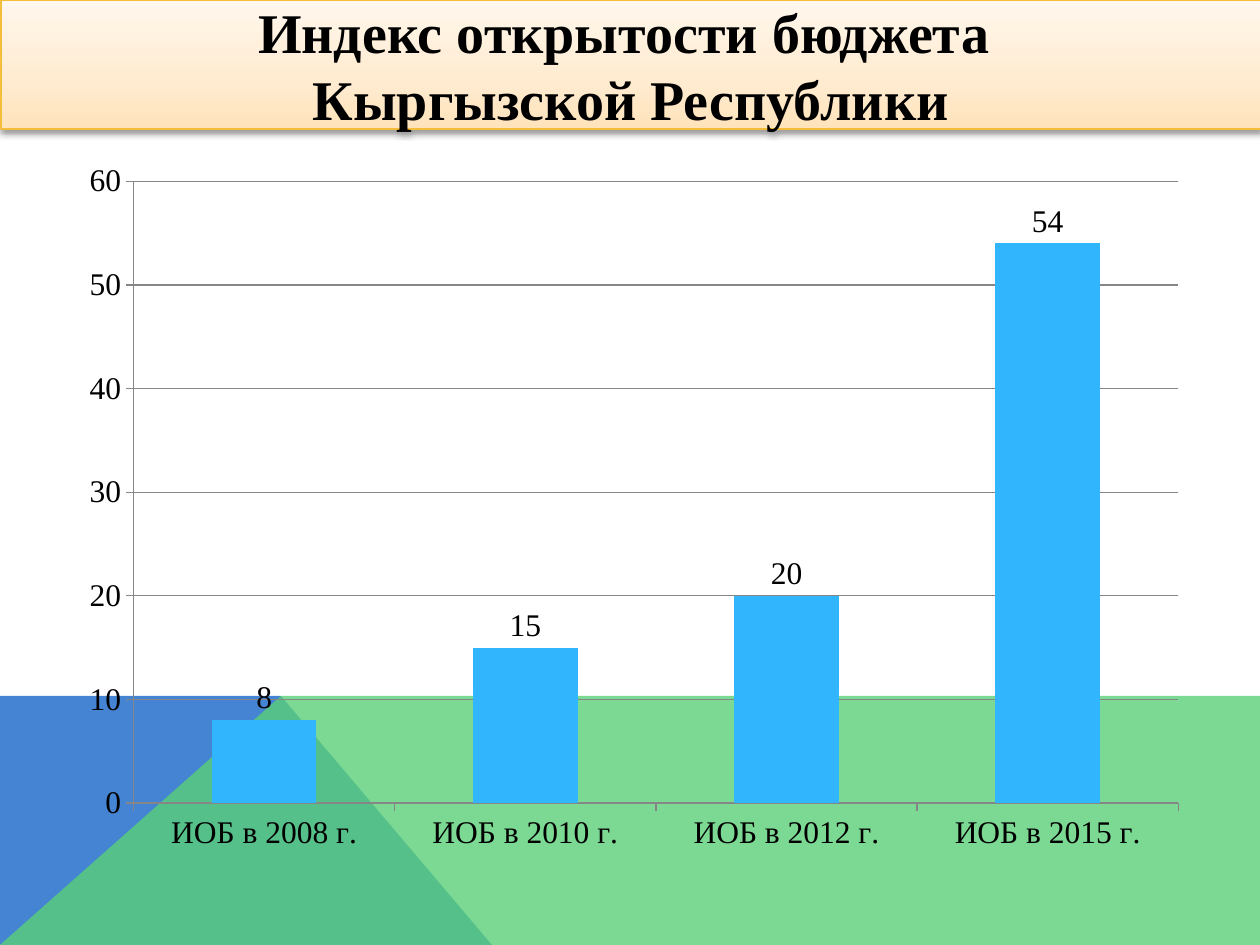
from lxml.etree import SubElement
from pptx import Presentation
from pptx.chart.data import CategoryChartData
from pptx.dml.color import RGBColor
from pptx.enum.chart import XL_CHART_TYPE, XL_LABEL_POSITION, XL_TICK_MARK
from pptx.enum.shapes import MSO_SHAPE
from pptx.enum.text import MSO_ANCHOR, PP_ALIGN
from pptx.oxml.ns import qn
from pptx.util import Pt

PX = 914400 / 126
FONT = "Times New Roman"
BLACK = RGBColor(0x00, 0x00, 0x00)
BLUE = RGBColor(0x45, 0x84, 0xD3)
GREEN = RGBColor(0x5B, 0xD0, 0x78)
SKY = RGBColor(0x31, 0xB6, 0xFD)
GREY = RGBColor(0x86, 0x86, 0x86)
GOLD = RGBColor(0xF4, 0xBE, 0x3A)
CREAM = [(0, RGBColor(0xFF, 0xE3, 0xBB)),
         (35, RGBColor(0xFF, 0xEB, 0xCF)),
         (100, RGBColor(0xFF, 0xF7, 0xED))]
DATA = {"ИОБ в 2008 г.": 8, "ИОБ в 2010 г.": 15,
        "ИОБ в 2012 г.": 20, "ИОБ в 2015 г.": 54}


def px(*nums):
    """Turn pixel lengths into EMU."""
    return [round(num * PX) for num in nums]


def add_node(base, tag, **attrs):
    """Append a DrawingML child with the given attributes."""
    return SubElement(base, qn(f"a:{tag}"), {key: str(val) for key, val in attrs.items()})


def add_tint(base, color, alpha=None):
    """Append a colour node with optional opacity in percent."""
    node = add_node(base, "srgbClr", val=color)
    if alpha is not None:
        add_node(node, "alpha", val=alpha * 1000)


def set_font(font, size, color=BLACK, bold=False):
    """Format a font."""
    font.name, font.size, font.bold = FONT, Pt(size), bold
    font.color.rgb = color


def add_text(shape, text, size, align=PP_ALIGN.CENTER, **style):
    """Write one paragraph into a shape."""
    frame = shape.text_frame
    frame.word_wrap = True
    frame.vertical_anchor = MSO_ANCHOR.MIDDLE
    para = frame.paragraphs[0]
    para.text, para.alignment = text, align
    for run in para.runs:
        set_font(run.font, size, **style)


def add_poly(slide, points, color, alpha=100):
    """Draw a filled outline."""
    form = slide.shapes.build_freeform(*points[0], scale=PX)
    form.add_line_segments(points[1:], close=True)
    shape = form.convert_to_shape()
    shape.shadow.inherit = False
    shape.line.fill.background()
    shape.fill.solid()
    shape.fill.fore_color.rgb = color
    if alpha < 100:
        tint = shape.fill._xPr.find(".//" + qn("a:srgbClr"))
        add_node(tint, "alpha", val=alpha * 1000)


def add_banner(slide, text):
    """Draw the title band with its gradient and shadow."""
    shape = slide.shapes.add_shape(MSO_SHAPE.RECTANGLE, *px(1, 0, 1260, 129))
    shape.line.color.rgb = GOLD
    shape.line.width = Pt(0.75)
    shape.fill.gradient()
    shape.fill.gradient_angle = 90
    props = shape._element.spPr
    stops = props.find(".//" + qn("a:gsLst"))
    for old in list(stops):
        stops.remove(old)
    for place, color in CREAM:
        add_tint(add_node(stops, "gs", pos=place * 1000), color)
    shape.shadow.inherit = False
    glow = add_node(props.find(qn("a:effectLst")), "outerShdw",
                    blurRad=Pt(3.1), dist=Pt(1.6), dir=90 * 60000, rotWithShape=0)
    add_tint(glow, BLACK, 38)
    add_text(shape, text, 32, bold=True)


def set_axis(axis):
    """Format the line and ticks of an axis."""
    axis.major_tick_mark = XL_TICK_MARK.OUTSIDE
    axis.minor_tick_mark = XL_TICK_MARK.NONE
    set_line(axis.format.line)


def set_line(line):
    """Give a chart line its grey stroke."""
    line.color.rgb = GREY
    line.width = Pt(0.75)


def add_bars(slide, data):
    """Add the column chart."""
    table = CategoryChartData()
    table.categories = list(data)
    table.add_series("Series 1", list(data.values()))
    chart = slide.shapes.add_chart(
        XL_CHART_TYPE.COLUMN_CLUSTERED, *px(67, 150, 1134, 714), table).chart
    chart.has_legend = chart.has_title = False
    set_font(chart.font, 18)
    for axis in (chart.category_axis, chart.value_axis):
        set_axis(axis)
    scale = chart.value_axis
    scale.minimum_scale, scale.maximum_scale, scale.major_unit = 0, 60, 10
    set_line(scale.major_gridlines.format.line)
    plot = chart.plots[0]
    plot.gap_width, plot.vary_by_categories = 150, False
    fill = plot.series[0].format.fill
    fill.solid()
    fill.fore_color.rgb = SKY
    plot.has_data_labels = True
    labels = plot.data_labels
    labels.show_value = True
    labels.position = XL_LABEL_POSITION.OUTSIDE_END
    set_font(labels.font, 18)


def main():
    """Build and save the slide."""
    deck = Presentation()
    deck.slide_width, deck.slide_height = px(1260, 945)
    slide = deck.slides.add_slide(deck.slide_layouts[6])
    add_poly(slide, [(0, 945), (0, 696), (281, 696), (492, 945)], BLUE)
    add_poly(slide, [(0, 945), (281, 696), (1260, 696), (1260, 945)], GREEN, alpha=80)
    add_bars(slide, DATA)
    add_banner(slide, "Индекс открытости бюджета \vКыргызской Республики")
    deck.save("out.pptx")


if __name__ == "__main__":
    main()
